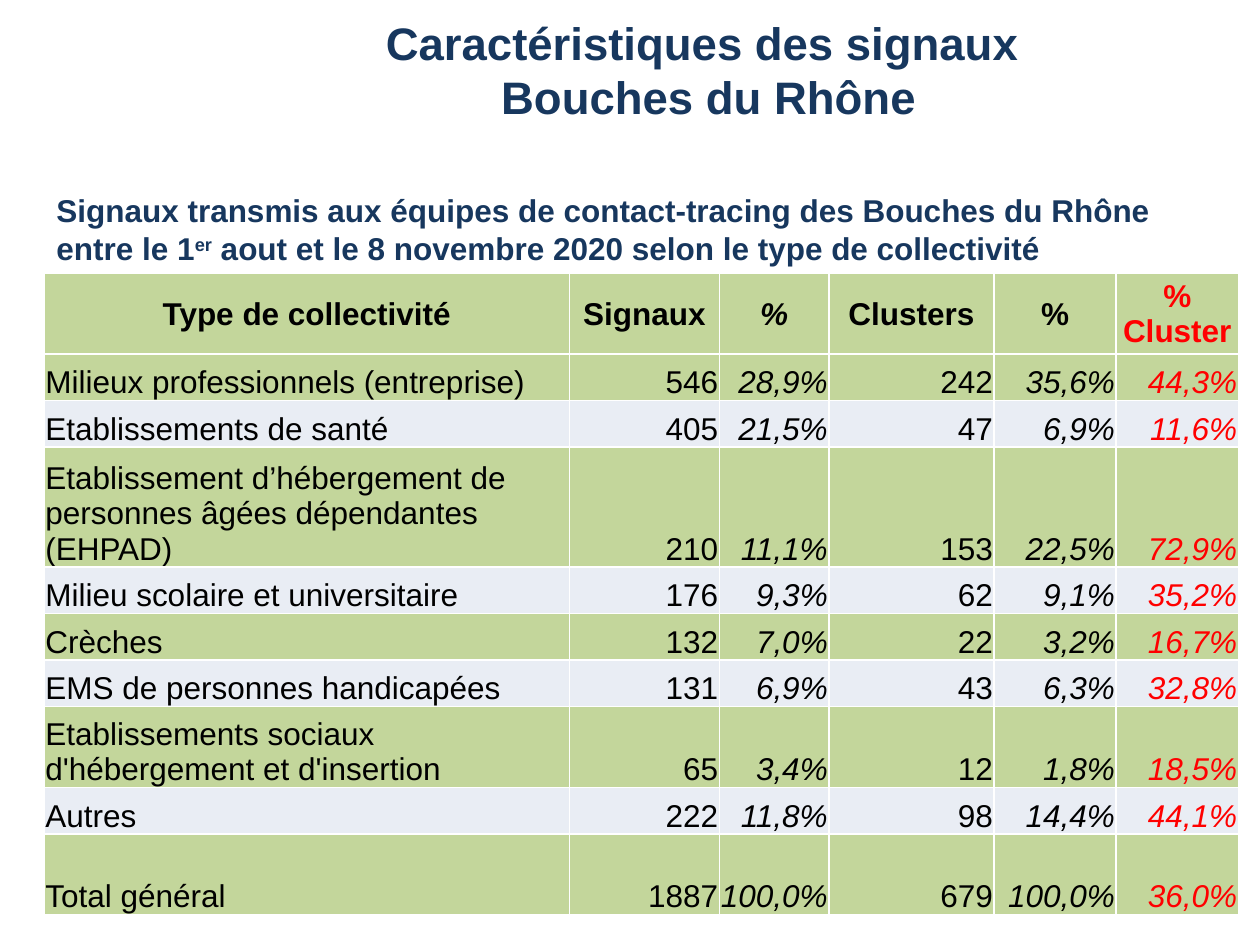
"""Build the slide on signals and clusters by type of community in Bouches du Rhône."""
import pptx
import pptx.util
import pptx.dml.color
import pptx.enum.text
import pptx.oxml
import pptx.oxml.ns
from pptx.util import Inches

COLORS = {"navy": "17375E", "black": "000000", "red": "FF0000",
          "green": "C3D69B", "pale": "E9EDF4", "white": "FFFFFF"}
ALIGN = pptx.enum.text.PP_ALIGN
ANCHOR = pptx.enum.text.MSO_ANCHOR


def style(run, size, color, bold=False, italic=False):
    run.font.name = "Arial"
    run.font.size = pptx.util.Pt(size)
    run.font.bold = bold
    run.font.italic = italic
    run.font.color.rgb = pptx.dml.color.RGBColor.from_string(COLORS[color])


def border(cell):
    props = cell._tc.get_or_add_tcPr()
    for place, side in enumerate(("lnL", "lnR", "lnT", "lnB")):
        props.insert(place, pptx.oxml.parse_xml(
            f'<a:{side} {pptx.oxml.ns.nsdecls("a")} w="12700"><a:solidFill>'
            f'<a:srgbClr val="{COLORS["white"]}"/></a:solidFill></a:{side}>'))


deck = pptx.Presentation()
deck.slide_width, deck.slide_height = Inches(10), Inches(7.5)
slide = deck.slides.add_slide(deck.slide_layouts[5])

title = slide.shapes.title
title.left, title.top = Inches(2.32), Inches(0.03)
title.width, title.height = Inches(6.61), Inches(1.04)
frame = title.text_frame
frame.text = "Caractéristiques des signaux \vBouches du Rhône"
frame.word_wrap = False
frame.auto_size = pptx.enum.text.MSO_AUTO_SIZE.NONE
frame.vertical_anchor = ANCHOR.MIDDLE
frame.margin_left = frame.margin_right = frame.margin_top = frame.margin_bottom = 0
frame.paragraphs[0].alignment = ALIGN.CENTER
for run in frame.paragraphs[0].runs:
    style(run, 26, "navy", bold=True)

box = slide.shapes.add_textbox(Inches(0.35), Inches(1.47), Inches(8.9), Inches(0.71))
box.text_frame.word_wrap = True
lead = box.text_frame.paragraphs[0]
for text, raised in (
        ("Signaux transmis aux équipes de contact-tracing des Bouches du Rhône entre le 1", False),
        ("er", True),
        (" aout et le 8 novembre 2020 selon le type de collectivité", False)):
    run = lead.add_run()
    run.text = text
    style(run, 18, "navy", bold=True)
    if raised:
        run.font._element.set("baseline", "30000")

rows = [
    ("Type de collectivité", "Signaux", "%", "Clusters", "%", "% Cluster"),
    ("Milieux professionnels (entreprise)", "546", "28,9%", "242", "35,6%", "44,3%"),
    ("Etablissements de santé", "405", "21,5%", "47", "6,9%", "11,6%"),
    ("Etablissement d’hébergement de personnes âgées dépendantes (EHPAD)",
     "210", "11,1%", "153", "22,5%", "72,9%"),
    ("Milieu scolaire et universitaire", "176", "9,3%", "62", "9,1%", "35,2%"),
    ("Crèches", "132", "7,0%", "22", "3,2%", "16,7%"),
    ("EMS de personnes handicapées", "131", "6,9%", "43", "6,3%", "32,8%"),
    ("Etablissements sociaux d'hébergement et d'insertion",
     "65", "3,4%", "12", "1,8%", "18,5%"),
    ("Autres", "222", "11,8%", "98", "14,4%", "44,1%"),
    ("Total général", "1887", "100,0%", "679", "100,0%", "36,0%"),
]
widths = (4.17, 1.19, 0.87, 1.31, 0.97, 0.97)
heights = (0.64, 0.37, 0.37, 0.95, 0.37, 0.37, 0.37, 0.64, 0.37, 0.64)
table = slide.shapes.add_table(len(rows), len(widths), Inches(0.35), Inches(2.17),
                               Inches(9.47), Inches(5.1)).table
for column, width in zip(table.columns, widths):
    column.width = Inches(width)
for line, height in zip(table.rows, heights):
    line.height = Inches(height)

for r, values in enumerate(rows):
    head = r == 0
    fill = "green" if head or r % 2 else "pale"
    for c, value in enumerate(values):
        cell = table.cell(r, c)
        cell.margin_left = cell.margin_right = cell.margin_top = Inches(0.01)
        cell.margin_bottom = 0
        cell.vertical_anchor = ANCHOR.MIDDLE if head else ANCHOR.BOTTOM
        cell.fill.solid()
        cell.fill.fore_color.rgb = pptx.dml.color.RGBColor.from_string(COLORS[fill])
        border(cell)
        cell.text_frame.text = value
        para = cell.text_frame.paragraphs[0]
        para.alignment = ALIGN.CENTER if head else ALIGN.RIGHT if c else ALIGN.LEFT
        slant = c == 2 if head else c in (2, 4, 5)
        style(para.runs[0], 18, "red" if c == 5 else "black", bold=head, italic=slant)

deck.save("out.pptx")
